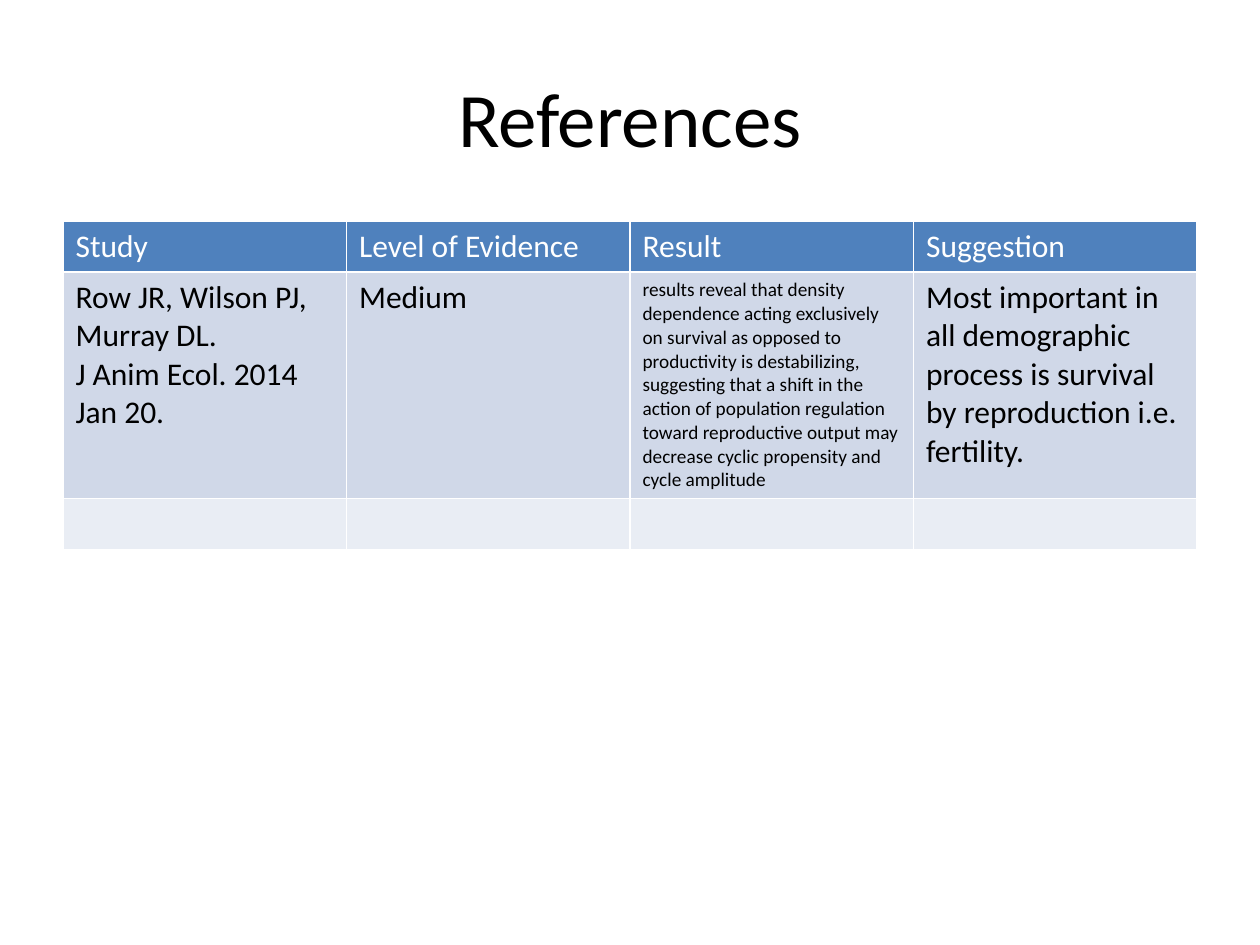
from pptx import Presentation
from pptx.dml.color import RGBColor
from pptx.enum.text import MSO_ANCHOR, PP_ALIGN
from pptx.util import Pt

MIDDLE = MSO_ANCHOR.MIDDLE
CENTER = PP_ALIGN.CENTER
BLACK = RGBColor(0x00, 0x00, 0x00)
WHITE = RGBColor(0xFF, 0xFF, 0xFF)
HEADER_BLUE = RGBColor(0x4F, 0x81, 0xBD)
BAND_DARK = RGBColor(0xD0, 0xD8, 0xE8)
BAND_LIGHT = RGBColor(0xE9, 0xED, 0xF4)
FONT = "Calibri"
TITLE_ONLY = 5


def px(length):
    return round(length * 914400 / 126)


def style(paragraph, size, color):
    paragraph.font.size = Pt(size)
    for run in paragraph.runs:
        run.font.name = FONT
        run.font.size = Pt(size)
        run.font.bold = False
        run.font.color.rgb = color


prs = Presentation()
prs.slide_width = px(1260)
prs.slide_height = px(945)
slide = prs.slides.add_slide(prs.slide_layouts[TITLE_ONLY])

heading = slide.shapes.title
heading.left, heading.top = px(63), px(38)
heading.width, heading.height = px(1134), px(158)
heading.text_frame.text = "References"
heading.text_frame.vertical_anchor = MIDDLE
heading.text_frame.paragraphs[0].alignment = CENTER
style(heading.text_frame.paragraphs[0], 44, BLACK)

studies = [
    ["Study", "Level of Evidence", "Result", "Suggestion"],
    [
        "Row JR, Wilson PJ, Murray DL.\nJ Anim Ecol. 2014 Jan 20.",
        "Medium",
        "results reveal that density dependence acting exclusively on survival "
        "as opposed to productivity is destabilizing, suggesting that a shift in "
        "the action of population regulation toward reproductive output may "
        "decrease cyclic propensity and cycle amplitude",
        "Most important in all demographic process is survival by reproduction "
        "i.e. fertility.",
    ],
    ["", "", "", ""],
]
row_colors = [(HEADER_BLUE, WHITE), (BAND_DARK, BLACK), (BAND_LIGHT, BLACK)]
RESULT_CELL = (1, 2)

evidence = slide.shapes.add_table(
    len(studies), len(studies[0]), px(63), px(221), px(1134), px(153)
).table
for r, (entries, (fill_color, text_color)) in enumerate(zip(studies, row_colors)):
    for c, entry in enumerate(entries):
        cell = evidence.cell(r, c)
        cell.fill.solid()
        cell.fill.fore_color.rgb = fill_color
        cell.text_frame.text = entry
        for paragraph in cell.text_frame.paragraphs:
            style(paragraph, 11 if (r, c) == RESULT_CELL else 18, text_color)

prs.save("out.pptx")
